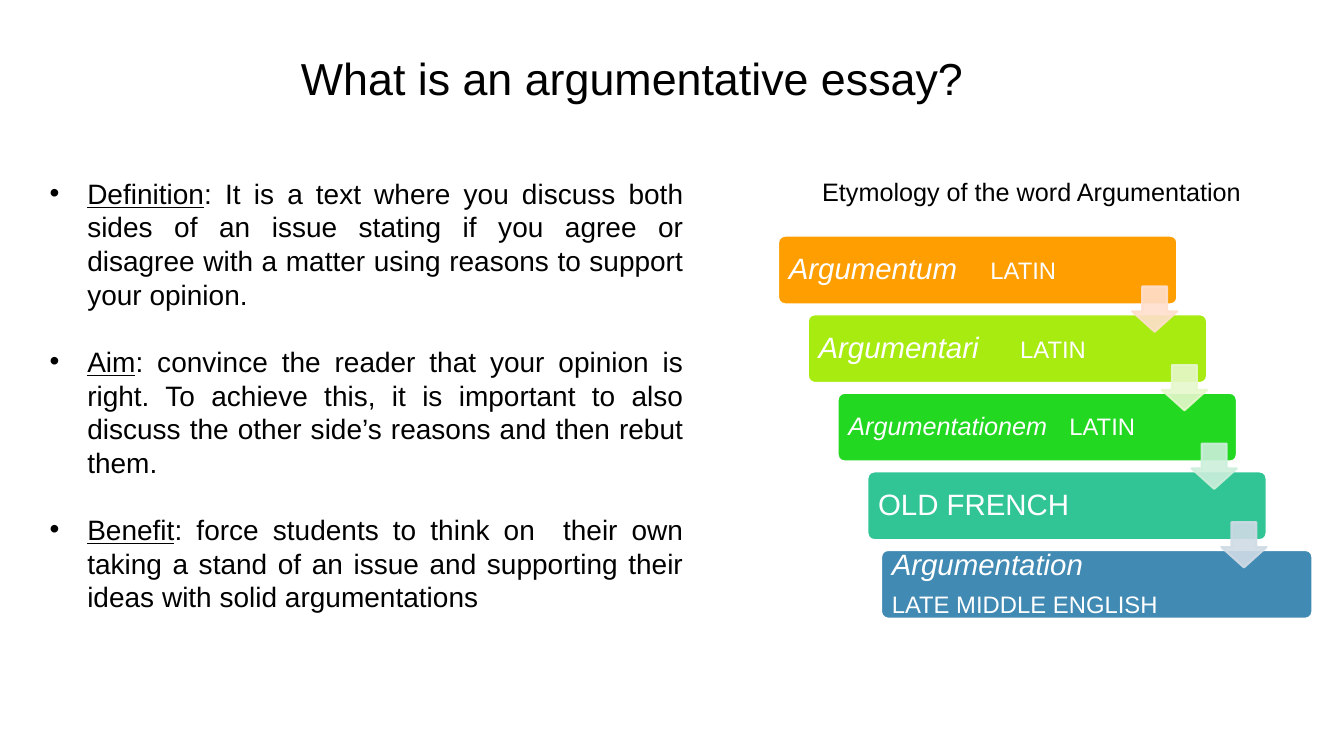
from lxml import etree
from pptx import Presentation
from pptx.dml.color import RGBColor
from pptx.enum.shapes import MSO_SHAPE as SHAPE
from pptx.enum.text import MSO_ANCHOR as ANCHOR, MSO_AUTO_SIZE as AUTO, PP_ALIGN as ALIGN
from pptx.oxml.ns import qn
from pptx.util import Cm, Pt

COLORS = {
    "text": "000000", "white": "FFFFFF",
    "bands": ["FE9E00", "A8EB11", "23D821", "31C595", "418AB3"],
    "arrows": ["FFDFCC", "E6F8CB", "CCEFDB", "CFDBE5"],
}


def add_run(p, text, size, color, **fmt):
    r = p.add_run()
    r.text = text
    for name, value in {"name": "Arial", "size": Pt(size), **fmt}.items():
        setattr(r.font, name, value)
    r.font.color.rgb = RGBColor.from_string(color)


def add_block(s, kind, box, adjust, fill, line):
    sp = s.shapes.add_shape(kind, *[Cm(v) for v in box])
    sp.shadow.inherit = False
    for i, value in enumerate(adjust):
        sp.adjustments[i] = value
    sp.fill.solid()
    sp.fill.fore_color.rgb = RGBColor.from_string(fill)
    sp.line.color.rgb = RGBColor.from_string(line)
    sp.line.width = Pt(1.5)
    return sp


prs = Presentation()
prs.slide_width, prs.slide_height = Cm(33.87), Cm(19.05)
s = prs.slides.add_slide(prs.slide_layouts[5])

title = s.shapes.title
title.left, title.top, title.width, title.height = Cm(0), Cm(1.14), Cm(31.88), Cm(2.31)
tf = title.text_frame
tf.auto_size = AUTO.NONE
tf.vertical_anchor = ANCHOR.TOP
p = tf.paragraphs[0]
p.alignment = ALIGN.CENTER
add_run(p, "What is an argumentative essay?", 32, COLORS["text"])

points = [
    ("Definition", ": It is a text where you discuss both sides of an issue stating if you agree or "
     "disagree with a matter using reasons to support your opinion."),
    ("Aim", ": convince the reader that your opinion is right. To achieve this, it is important to also "
     "discuss the other side’s reasons and then rebut them."),
    ("Benefit", ": force students to think on  their own taking a stand of an issue and supporting "
     "their ideas with solid argumentations"),
]
tf = s.shapes.add_textbox(Cm(1), Cm(4.32), Cm(16.48), Cm(11.38)).text_frame
tf.word_wrap = True
for i, (term, text) in enumerate(points):
    p = tf.add_paragraph() if i else tf.paragraphs[0]
    p.alignment = ALIGN.JUSTIFY
    p.line_spacing = Pt(24)
    p.space_before = Pt(24 if i else 0)
    pPr = p._p.get_or_add_pPr()
    pPr.set("marL", str(Cm(0.95)))
    pPr.set("indent", str(-Cm(0.95)))
    etree.SubElement(pPr, qn("a:buFont")).set("typeface", "Arial")
    etree.SubElement(pPr, qn("a:buChar")).set("char", "•")
    add_run(p, term, 20, COLORS["text"], underline=True)
    add_run(p, text, 20, COLORS["text"])

tf = s.shapes.add_textbox(Cm(20.47), Cm(4.32), Cm(11.18), Cm(1.02)).text_frame
tf.word_wrap = False
add_run(tf.paragraphs[0], "Etymology of the word Argumentation", 18, COLORS["text"])

STEP_X, STEP_Y = 0.75, 1.98
bands = [
    (10.06, 5.08, [[("Argumentum", 21, True), ("\tLATIN", 17, False)]]),
    (10.06, 5.08, [[("Argumentari", 21, True), ("\tLATIN", 17, False)]]),
    (10.06, 5.57, [[("Argumentationem", 18, True), ("\tLATIN", 17, False)]]),
    (10.06, 5.08, [[("OLD FRENCH", 21, False)]]),
    (10.87, 5.08, [[("Argumentation", 21, True)], [("LATE MIDDLE ENGLISH", 17, False)]]),
]
for i, (width, tab, lines) in enumerate(bands):
    left = 24.64 + i * STEP_X - width / 2
    band = add_block(s, SHAPE.ROUNDED_RECTANGLE, (left, 5.94 + i * STEP_Y, width, 1.73),
                     [0.1], COLORS["bands"][i], COLORS["white"])
    tf = band.text_frame
    tf.word_wrap = True
    tf.vertical_anchor = ANCHOR.MIDDLE
    for side in ("left", "top", "right", "bottom"):
        setattr(tf, f"margin_{side}", Cm(0.22))
    for j, line in enumerate(lines):
        p = tf.add_paragraph() if j else tf.paragraphs[0]
        p.alignment = ALIGN.LEFT
        p.line_spacing = 0.9
        p.space_after = Pt(8)
        stops = etree.SubElement(p._p.get_or_add_pPr(), qn("a:tabLst"))
        etree.SubElement(stops, qn("a:tab"), pos=str(Cm(tab)), algn="l")
        for text, size, italic in line:
            add_run(p, text, size, COLORS["white"], italic=italic)

for i, color in enumerate(COLORS["arrows"]):
    arrow = add_block(s, SHAPE.DOWN_ARROW, (28.53 + i * STEP_X, 7.22 + i * STEP_Y, 1.14, 1.14),
                      [0.55, 0.45], color, color)
    for clr in arrow._element.spPr.iter(qn("a:srgbClr")):
        etree.SubElement(clr, qn("a:alpha")).set("val", "90000")

prs.save("out.pptx")
